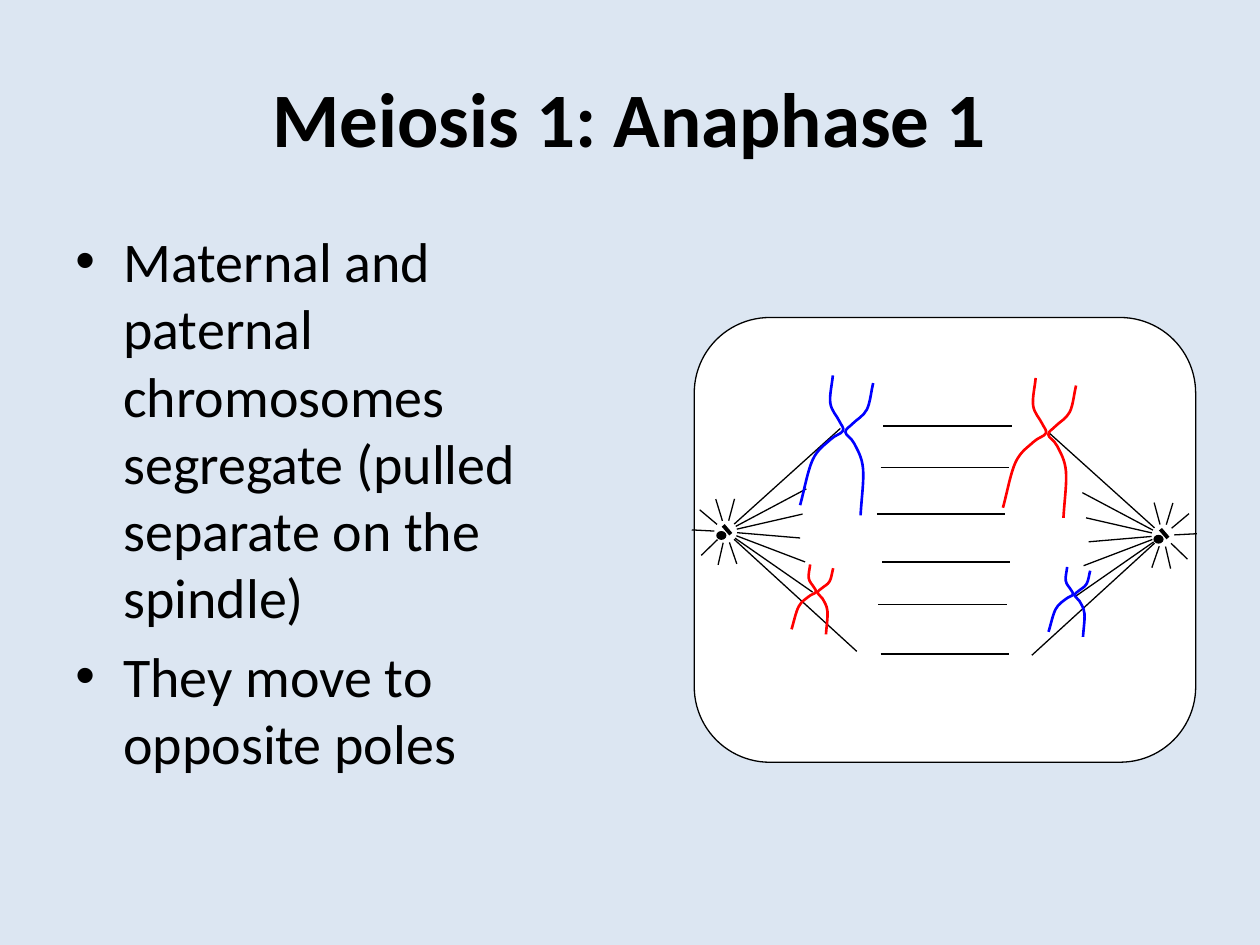
from math import cos, dist, radians, sin

from lxml.etree import SubElement
from pptx import Presentation
from pptx.dml.color import RGBColor
from pptx.enum.shapes import MSO_CONNECTOR, MSO_SHAPE
from pptx.enum.text import MSO_ANCHOR, PP_ALIGN
from pptx.oxml.ns import qn
from pptx.util import Inches, Pt

# Content
TITLE = "Meiosis 1: Anaphase 1"
BULLETS = [
    "Maternal and paternal chromosomes segregate (pulled separate on the spindle)",
    "They move to opposite poles",
]

THEME = {
    "font": "Calibri", "title": 44, "body": 32,
    "thin": 0.75, "chromatid": 1.5, "centriole": 2.25,
    "background": RGBColor(0xDC, 0xE6, 0xF2), "cell": RGBColor(255, 255, 255),
    "ink": RGBColor(0, 0, 0), "blue": RGBColor(0, 0, 255), "red": RGBColor(255, 0, 0),
}

# Layout in inches: left, top, width, height
TITLE_BOX = (0.5, 0.3, 9, 1.25)
BODY_BOX = (0.5, 1.75, 4.51, 4.95)
CELL_BOX = (5.51, 2.52, 3.98, 3.53)
BULLET_INDENT = 0.38

# Spindle poles: the right one mirrors the left one, slightly lower
LEFT_POLE = (5.76, 4.22)
RIGHT_POLE = (9.23, 4.25)
FIBRE_TIPS = [(0.91, -0.82), (0.64, -0.34), (0.61, -0.14), (0.59, 0.05),
              (0.63, 0.24), (0.69, 0.48), (1.04, 0.95)]  # from the left pole
ASTER_ANGLES = [75, 107, 140, 177, 224, 257, 289]        # degrees
ASTER_INNER, ASTER_OUTER = 0.09, 0.27                    # radii

# Fibres between the poles: left end and height
MIDDLE_FIBRES = [(7.01, 3.38), (6.99, 3.71), (6.96, 4.08),
                 (7.00, 4.46), (6.97, 4.80), (6.99, 5.19)]
MIDDLE_LENGTH = 1.02

# Points each chromatid passes through, from the top of the first one
CHROMATIDS = [
    [(0, 0), (-.02, .22), (.05, .36), (.08, .44), (-.02, .51), (-.16, .67), (-.26, 1.03)],
    [(.32, .06), (.27, .27), (.16, .38), (.10, .45), (.17, .54), (.24, .74), (.22, 1.11)],
]
SIZES = {"long": (1, 1), "short": (0.57, 0.5)}  # horizontal and vertical scale
CHROMOSOMES = [
    (6.61, 2.98, "long", "blue"), (8.22, 3.00, "long", "red"),
    (8.47, 4.50, "short", "blue"), (6.43, 4.48, "short", "red"),
]


# Drawing helpers
def set_outline(shape, color="ink", weight="thin"):
    shape.line.color.rgb = THEME[color]
    shape.line.width = Pt(THEME[weight])


def add_filled_shape(shapes, kind, box, fill):
    shape = shapes.add_shape(kind, *map(Inches, box))
    shape.shadow.inherit = False
    shape.fill.solid()
    shape.fill.fore_color.rgb = THEME[fill]
    set_outline(shape)
    return shape


def add_line(shapes, start, end, weight="thin"):
    line = shapes.add_connector(MSO_CONNECTOR.STRAIGHT, *map(Inches, (*start, *end)))
    set_outline(line, weight=weight)
    SubElement(line._element.spPr, qn("a:effectLst"))


def bezier_points(knots):
    """Put two control points between neighbouring knots (Catmull-Rom rule)."""
    last = len(knots) - 1
    tangents = []
    for index in range(last + 1):
        before, after = max(index - 1, 0), min(index + 1, last)
        tangents.append([(b - a) / (3 * (after - before))
                         for a, b in zip(knots[before], knots[after])])
    points = [knots[0]]
    for index in range(last):
        (x1, y1), (x2, y2) = knots[index:index + 2]
        (dx1, dy1), (dx2, dy2) = tangents[index:index + 2]
        points += [(x1 + dx1, y1 + dy1), (x2 - dx2, y2 - dy2), (x2, y2)]
    return points


def add_curve(shapes, knots, color):
    start, *others = [(Inches(x), Inches(y)) for x, y in bezier_points(knots)]
    builder = shapes.build_freeform(*start)
    builder.add_line_segments(others, close=False)
    curve = builder.convert_to_shape()
    curve.shadow.inherit = False
    curve.fill.background()
    set_outline(curve, color, "chromatid")

    # Join every three straight segments into one Bezier segment
    segments = list(curve._element.iter(qn("a:lnTo")))
    outline = segments[0].getparent()
    for first in range(0, len(segments), 3):
        bezier = SubElement(outline, qn("a:cubicBezTo"))
        for segment in segments[first:first + 3]:
            bezier.append(segment[0])
            outline.remove(segment)


# Text
def style_text(paragraph, size, bold=False):
    font = paragraph.font
    font.name, font.size, font.bold = THEME["font"], Pt(size), bold
    font.color.rgb = THEME["ink"]


def add_title(slide):
    title = slide.shapes.title
    title.left, title.top, title.width, title.height = map(Inches, TITLE_BOX)
    title.text_frame.text = TITLE
    title.text_frame.vertical_anchor = MSO_ANCHOR.MIDDLE
    paragraph = title.text_frame.paragraphs[0]
    paragraph.alignment = PP_ALIGN.CENTER
    style_text(paragraph, THEME["title"], bold=True)


def add_bullets(slide):
    frame = slide.shapes.add_textbox(*map(Inches, BODY_BOX)).text_frame
    frame.word_wrap = True
    for index, bullet in enumerate(BULLETS):
        paragraph = frame.add_paragraph() if index else frame.paragraphs[0]
        paragraph.text = bullet
        properties = paragraph._p.get_or_add_pPr()
        properties.set("marL", str(Inches(BULLET_INDENT)))
        properties.set("indent", str(-Inches(BULLET_INDENT)))
        SubElement(properties, qn("a:buFont"), typeface="Arial")
        SubElement(properties, qn("a:buChar"), char="•")
        paragraph.space_before = Pt(0.2 * THEME["body"] if index else 0)
        style_text(paragraph, THEME["body"])


# Parts of the cell
def add_pole(shapes, center, side):
    """Draw one spindle pole; side is 1 for the left and -1 for the right."""
    def from_center(dx, dy):
        return center[0] + side * dx, center[1] + dy

    for tip in FIBRE_TIPS:
        share = ASTER_INNER / dist((0, 0), tip)
        add_line(shapes, from_center(tip[0] * share, tip[1] * share), from_center(*tip))
    for angle in map(radians, ASTER_ANGLES):
        inner, outer = [from_center(radius * cos(angle), -radius * sin(angle))
                        for radius in (ASTER_INNER, ASTER_OUTER)]
        add_line(shapes, inner, outer)

    # The two centrioles have the same direction at both poles
    x, y = center
    add_line(shapes, (x - 0.02, y - 0.05), (x + 0.04, y + 0.02), "centriole")
    add_filled_shape(shapes, MSO_SHAPE.OVAL, (x - 0.07, y, 0.07, 0.06), "ink")


def add_chromosome(shapes, left, top, size, color):
    scale_x, scale_y = SIZES[size]
    for chromatid in CHROMATIDS:
        knots = [(left + x * scale_x, top + y * scale_y) for x, y in chromatid]
        add_curve(shapes, knots, color)


def add_cell(slide):
    shapes = slide.shapes.add_group_shape().shapes
    cell = add_filled_shape(shapes, MSO_SHAPE.ROUNDED_RECTANGLE, CELL_BOX, "cell")
    cell.adjustments[0] = 0.17
    add_pole(shapes, LEFT_POLE, side=1)
    add_pole(shapes, RIGHT_POLE, side=-1)
    for chromosome in CHROMOSOMES:
        add_chromosome(shapes, *chromosome)
    for left, height in MIDDLE_FIBRES:
        add_line(shapes, (left, height), (left + MIDDLE_LENGTH, height))


def main():
    presentation = Presentation()
    presentation.slide_width, presentation.slide_height = Inches(10), Inches(7.5)
    slide = presentation.slides.add_slide(presentation.slide_layouts[5])
    slide.background.fill.solid()
    slide.background.fill.fore_color.rgb = THEME["background"]
    add_title(slide)
    add_bullets(slide)
    add_cell(slide)
    presentation.save("out.pptx")


if __name__ == "__main__":
    main()
